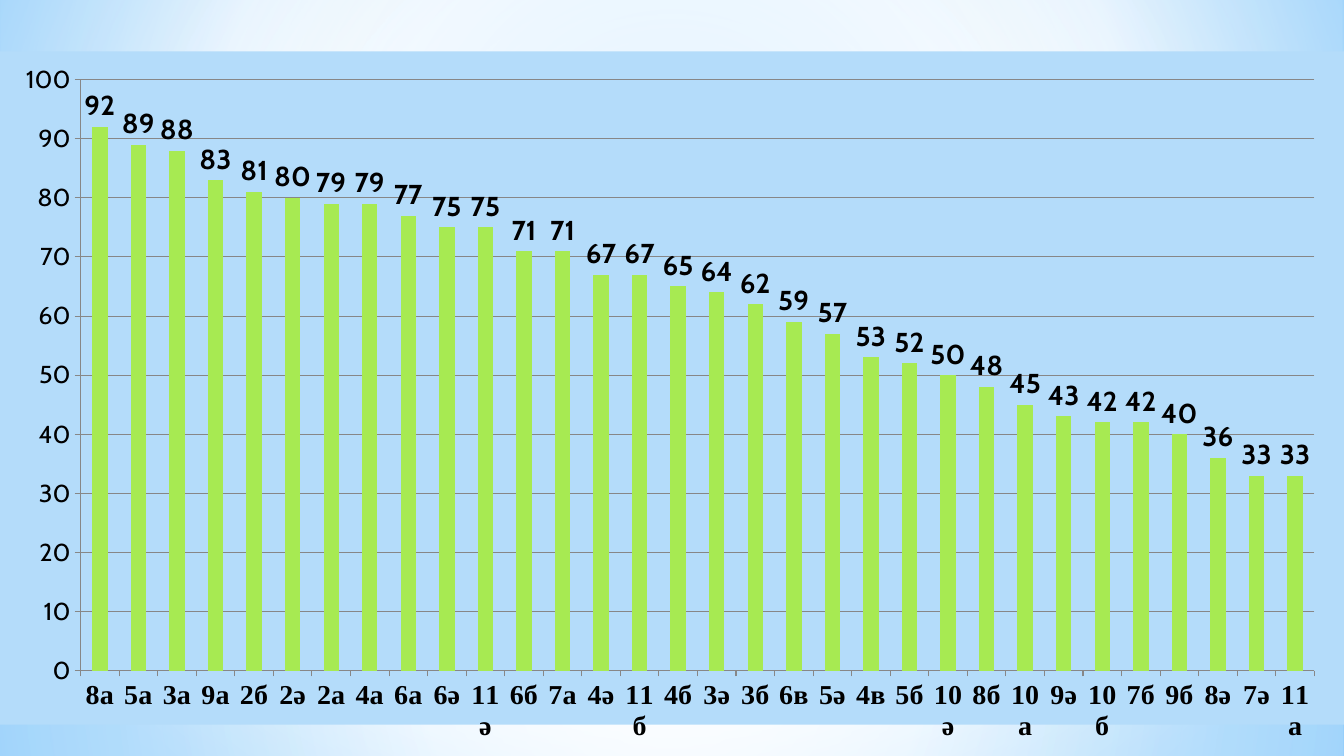
from lxml.etree import SubElement
from pptx import Presentation
from pptx.chart.data import CategoryChartData
from pptx.dml.color import RGBColor
from pptx.enum.chart import XL_CHART_TYPE, XL_LABEL_POSITION, XL_TICK_MARK
from pptx.enum.shapes import MSO_SHAPE
from pptx.oxml import parse_xml
from pptx.oxml.ns import nsdecls, qn
from pptx.util import Inches, Pt

COLORS = {
    "white": "FFFFFF",
    "sky": "9ED5FF",
    "deep_sky": "5BB9FF",
    "pale_blue": "B4DCFA",
    "bar": "A7EA52",
    "line": "878787",
    "text": "000000",
}

CLASS_SCORES = [
    ("8а", 92), ("5а", 89), ("3а", 88), ("9а", 83), ("2б", 81), ("2ә", 80),
    ("2а", 79), ("4а", 79), ("6а", 77), ("6ә", 75), ("11ә", 75), ("6б", 71),
    ("7а", 71), ("4ә", 67), ("11б", 67), ("4б", 65), ("3ә", 64), ("3б", 62),
    ("6в", 59), ("5ә", 57), ("4в", 53), ("5б", 52), ("10ә", 50), ("8б", 48),
    ("10а", 45), ("9ә", 43), ("10б", 42), ("7б", 42), ("9б", 40), ("8ә", 36),
    ("7ә", 33), ("11а", 33),
]


def color(name):
    return RGBColor.from_string(COLORS[name])


def radial_gradient(stops, center=(50, 50, 50, 50)):
    """Return a circular gradFill from (position, colour, opacity) percentages."""
    stop_xml = "".join(
        f'<a:gs pos="{position * 1000}"><a:srgbClr val="{COLORS[name]}">'
        f'<a:alpha val="{opacity * 1000}"/></a:srgbClr></a:gs>'
        for position, name, opacity in stops
    )
    left, top, right, bottom = (side * 1000 for side in center)
    return parse_xml(
        f'<a:gradFill {nsdecls("a")} rotWithShape="1"><a:gsLst>{stop_xml}</a:gsLst>'
        f'<a:path path="circle"><a:fillToRect l="{left}" t="{top}" r="{right}" '
        f'b="{bottom}"/></a:path></a:gradFill>'
    )


def set_background(slide, gradient):
    slide.background.fill.solid()
    properties = slide.element.find(".//" + qn("p:bgPr"))
    properties.replace(properties.find(qn("a:solidFill")), gradient)


def add_panel(slide, top, height, gradient):
    shape = slide.shapes.add_shape(
        MSO_SHAPE.RECTANGLE, 0, Inches(top), Inches(13.33), Inches(height)
    )
    shape.shadow.inherit = False
    shape.line.fill.background()
    shape.fill.solid()
    properties = shape.element.spPr
    properties.replace(properties.find(qn("a:solidFill")), gradient)


def set_font(font, name, size, bold=False):
    font.name, font.size, font.bold = name, Pt(size), bold
    font.color.rgb = color("text")


def style_axis(axis):
    axis.major_tick_mark = XL_TICK_MARK.OUTSIDE
    axis.minor_tick_mark = XL_TICK_MARK.NONE
    axis.format.line.color.rgb = color("line")


def fill_chart_area(chart):
    chart_space = chart.element
    chart_space.find(qn("c:chart")).addnext(parse_xml(
        f'<c:spPr {nsdecls("c", "a")}><a:solidFill><a:srgbClr '
        f'val="{COLORS["pale_blue"]}"/></a:solidFill><a:ln><a:noFill/></a:ln></c:spPr>'
    ))


def place_plot_area(chart, **fractions):
    plot_area = chart.element.find(".//" + qn("c:plotArea"))
    for old_layout in plot_area.findall(qn("c:layout")):
        plot_area.remove(old_layout)
    layout = parse_xml(f'<c:layout {nsdecls("c")}/>')
    manual = SubElement(layout, qn("c:manualLayout"))
    settings = {"layoutTarget": "inner", "xMode": "edge", "yMode": "edge", **fractions}
    for tag, value in settings.items():
        SubElement(manual, qn("c:" + tag)).set("val", str(value))
    plot_area.insert(0, layout)


def show_every_category(axis):
    axis.tick_labels.font._element.getparent().getparent()
    element = axis._element
    element.find(".//" + qn("a:bodyPr")).set("rot", "0")
    element.find(qn("c:noMultiLvlLbl")).addprevious(
        parse_xml(f'<c:tickLblSkip {nsdecls("c")} val="1"/>')
    )


def add_score_chart(slide):
    data = CategoryChartData()
    data.categories = [name for name, _ in CLASS_SCORES]
    data.add_series("Series 1", [score for _, score in CLASS_SCORES])
    chart = slide.shapes.add_chart(
        XL_CHART_TYPE.COLUMN_CLUSTERED, 0, Inches(0.51), Inches(13.33), Inches(6.85), data
    ).chart
    chart.has_legend = False
    chart.has_title = False
    set_font(chart.font, "Cabin", 18)
    fill_chart_area(chart)
    place_plot_area(chart, x=0.06, y=0.042, w=0.918, h=0.878)

    style_axis(chart.category_axis)
    set_font(chart.category_axis.tick_labels.font, "Times New Roman", 20, True)
    show_every_category(chart.category_axis)

    values = chart.value_axis
    style_axis(values)
    values.minimum_scale, values.maximum_scale, values.major_unit = 0, 100, 10
    values.major_gridlines.format.line.color.rgb = color("line")

    plot = chart.plots[0]
    plot.gap_width = 150
    plot.vary_by_categories = False
    bars = plot.series[0].format.fill
    bars.solid()
    bars.fore_color.rgb = color("bar")
    plot.has_data_labels = True
    labels = plot.data_labels
    labels.show_value = True
    labels.position = XL_LABEL_POSITION.OUTSIDE_END
    set_font(labels.font, "Cabin", 20, True)


def main():
    presentation = Presentation()
    presentation.slide_width = Inches(13.33)
    presentation.slide_height = Inches(7.5)
    slide = presentation.slides.add_slide(presentation.slide_layouts[6])
    set_background(slide, radial_gradient(
        [(0, "sky", 100), (60, "white", 100), (100, "deep_sky", 100)], (20, 10, 20, 60)
    ))
    add_panel(slide, 5.58, 1.92, radial_gradient(
        [(0, "white", 91), (37, "white", 76), (100, "pale_blue", 79)]
    ))
    add_panel(slide, 0, 5.58, radial_gradient(
        [(0, "white", 89), (48, "white", 62), (100, "pale_blue", 79)]
    ))
    add_score_chart(slide)
    presentation.save("out.pptx")


if __name__ == "__main__":
    main()
